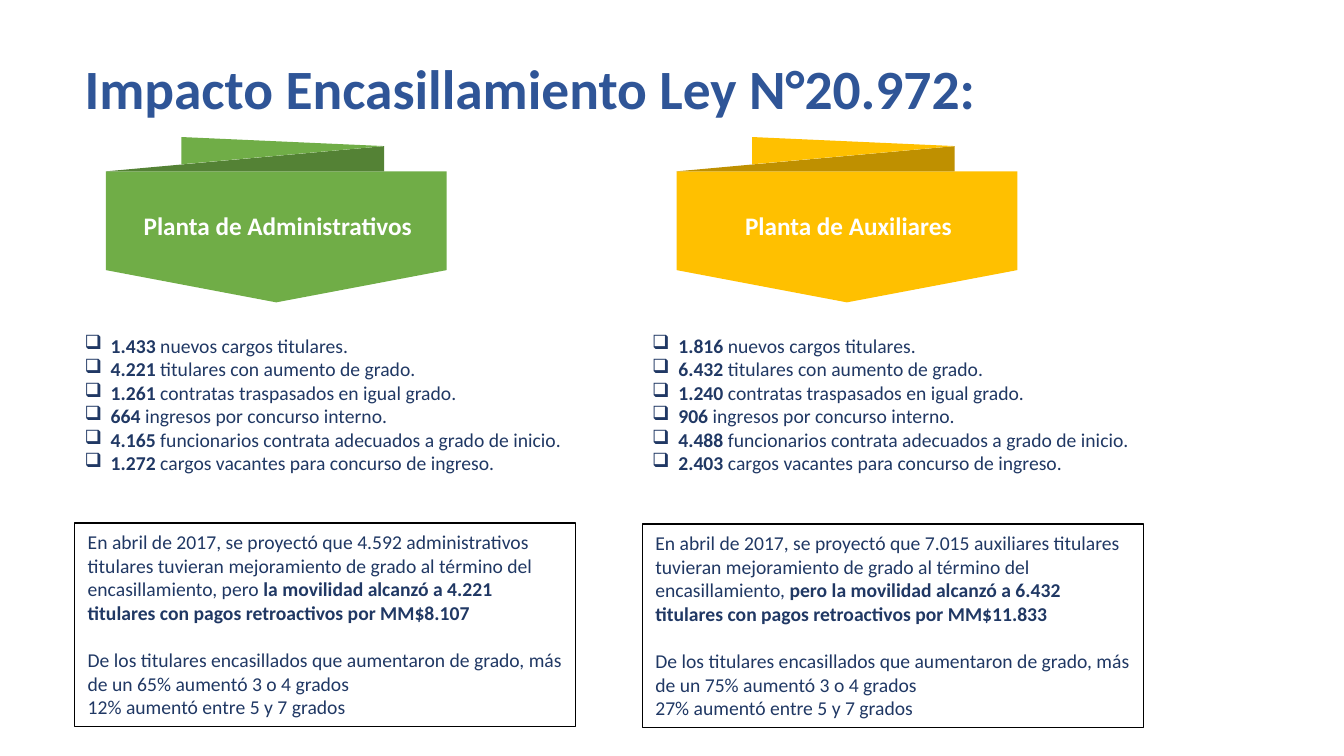
import pptx
import pptx.dml.color
import pptx.enum.shapes
import pptx.enum.text
import pptx.util
from lxml import etree

RGBColor = pptx.dml.color.RGBColor
Inches = pptx.util.Inches
Pt = pptx.util.Pt
ANCHOR = pptx.enum.text.MSO_ANCHOR
ALIGN = pptx.enum.text.PP_ALIGN

WHITE = RGBColor(0xFF, 0xFF, 0xFF)
BLACK = RGBColor(0x00, 0x00, 0x00)
NAVY = RGBColor(0x20, 0x38, 0x64)
TITLE_BLUE = RGBColor(0x2F, 0x55, 0x97)
GREEN = RGBColor(0x70, 0xAD, 0x47)
DARK_GREEN = RGBColor(0x54, 0x82, 0x35)
AMBER = RGBColor(0xFF, 0xC0, 0x00)
DARK_AMBER = RGBColor(0xBF, 0x90, 0x00)

MARGIN = 0.74
COLUMN_STEP = 5.63
COLUMN_WIDTH = 4.97
RIBBON_LEFT = 1.05
RIBBON_STEP = 5.66

presentation = pptx.Presentation()
presentation.slide_width = Inches(13.33)
presentation.slide_height = Inches(7.5)
slide = presentation.slides.add_slide(presentation.slide_layouts[6])


def write(frame, paragraphs, size=14, color=NAVY, align=ALIGN.LEFT,
          anchor=ANCHOR.TOP, bullet=None, spacing=None, gap_before=None):
    """Fill a frame; each paragraph is a list of (text, bold) runs.

    gap_before is the index of the paragraph set apart from the one above it.
    """
    frame.word_wrap = True
    frame.vertical_anchor = anchor
    for index, runs in enumerate(paragraphs):
        paragraph = frame.paragraphs[0] if index == 0 else frame.add_paragraph()
        paragraph.alignment = align
        if spacing:
            paragraph.line_spacing = spacing
        if index == gap_before:
            paragraph.space_before = Pt(17)
        if bullet:
            properties = paragraph._p.get_or_add_pPr()
            properties.set("marL", str(Inches(0.26)))
            properties.set("indent", str(-Inches(0.26)))
            mark = etree.SubElement(properties, pptx.oxml.ns.qn("a:buChar"))
            mark.set("char", bullet)
        for text, bold in runs:
            run = paragraph.add_run()
            run.text = text
            run.font.name = "Calibri"
            run.font.size = Pt(size)
            run.font.bold = bold
            run.font.color.rgb = color


# Ribbon outlines, in inches from the left edge of the ribbon and the slide top
BANNER = [(3.38, 1.7), (0, 1.7), (0, 2.68), (1.69, 3), (3.38, 2.68)]
SHADED_FOLD = [(0, 1.7), (2.76, 1.45), (2.76, 1.7)]
BACK_FOLD = [(2.76, 1.45), (0.75, 1.36), (0.75, 1.63)]

DUTIES = [
    " nuevos cargos titulares.",
    " titulares con aumento de grado.",
    " contratas traspasados en igual grado.",
    " ingresos por concurso interno.",
    " funcionarios contrata adecuados a grado de inicio.",
    " cargos vacantes para concurso de ingreso.",
]

plants = [
    ("Planta de Administrativos", GREEN, DARK_GREEN,
     ["1.433", "4.221", "1.261", "664", "4.165", "1.272"],
     "En abril de 2017, se proyectó que 4.592 administrativos titulares tuvieran "
     "mejoramiento de grado al término del encasillamiento, pero ",
     "la movilidad alcanzó a 4.221 titulares con pagos retroactivos por MM$8.107",
     "65%", "12%"),
    ("Planta de Auxiliares", AMBER, DARK_AMBER,
     ["1.816", "6.432", "1.240", "906", "4.488", "2.403"],
     "En abril de 2017, se proyectó que 7.015 auxiliares titulares tuvieran "
     "mejoramiento de grado al término del encasillamiento, ",
     "pero la movilidad alcanzó a 6.432 titulares con pagos retroactivos por MM$11.833",
     "75%", "27%"),
]

for column, (plant, color, shade, counts, forecast, outcome,
             three_or_four, five_to_seven) in enumerate(plants):
    left = MARGIN + column * COLUMN_STEP
    ribbon_left = RIBBON_LEFT + column * RIBBON_STEP

    ribbon = slide.shapes.add_group_shape()
    for outline, fill in [(BANNER, color), (SHADED_FOLD, shade), (BACK_FOLD, color)]:
        points = [(Inches(ribbon_left + x), Inches(y)) for x, y in outline]
        builder = ribbon.shapes.build_freeform(*points[0])
        builder.add_line_segments(points[1:], close=True)
        piece = builder.convert_to_shape()
        piece.shadow.inherit = False
        piece.fill.solid()
        piece.fill.fore_color.rgb = fill
        piece.line.fill.background()

    heading = slide.shapes.add_textbox(
        Inches(ribbon_left + 0.02), Inches(2.04), Inches(3.37), Inches(0.4))
    write(heading.text_frame, [[(plant, True)]], size=18, color=WHITE,
          align=ALIGN.CENTER, anchor=ANCHOR.BOTTOM)

    results = slide.shapes.add_textbox(
        Inches(left), Inches(3.26), Inches(COLUMN_WIDTH), Inches(1.51))
    write(results.text_frame,
          [[(count, True), (duty, False)] for count, duty in zip(counts, DUTIES)],
          bullet="❑")

    summary = slide.shapes.add_shape(
        pptx.enum.shapes.MSO_SHAPE.RECTANGLE,
        Inches(left), Inches(5.19 + column * 0.01), Inches(COLUMN_WIDTH), Inches(2.02))
    summary.shadow.inherit = False
    summary.fill.background()
    summary.line.color.rgb = BLACK
    summary.line.width = Pt(1)
    frame = summary.text_frame
    frame.margin_left = frame.margin_right = Inches(0.13)
    frame.margin_top = frame.margin_bottom = Inches(0.07)
    write(frame, [
        [(forecast, False), (outcome, True)],
        [("De los titulares encasillados que aumentaron de grado, más de un "
          f"{three_or_four} aumentó 3 o 4 grados", False)],
        [(f"{five_to_seven} aumentó entre 5 y 7 grados", False)],
    ], gap_before=1)

title = slide.shapes.add_textbox(
    Inches(MARGIN), Inches(0.55), Inches(11.85), Inches(0.71))
write(title.text_frame, [[("Impacto Encasillamiento Ley N°20.972:", True)]],
      size=39.6, color=TITLE_BLUE, anchor=ANCHOR.MIDDLE, spacing=0.9)

presentation.save("out.pptx")
